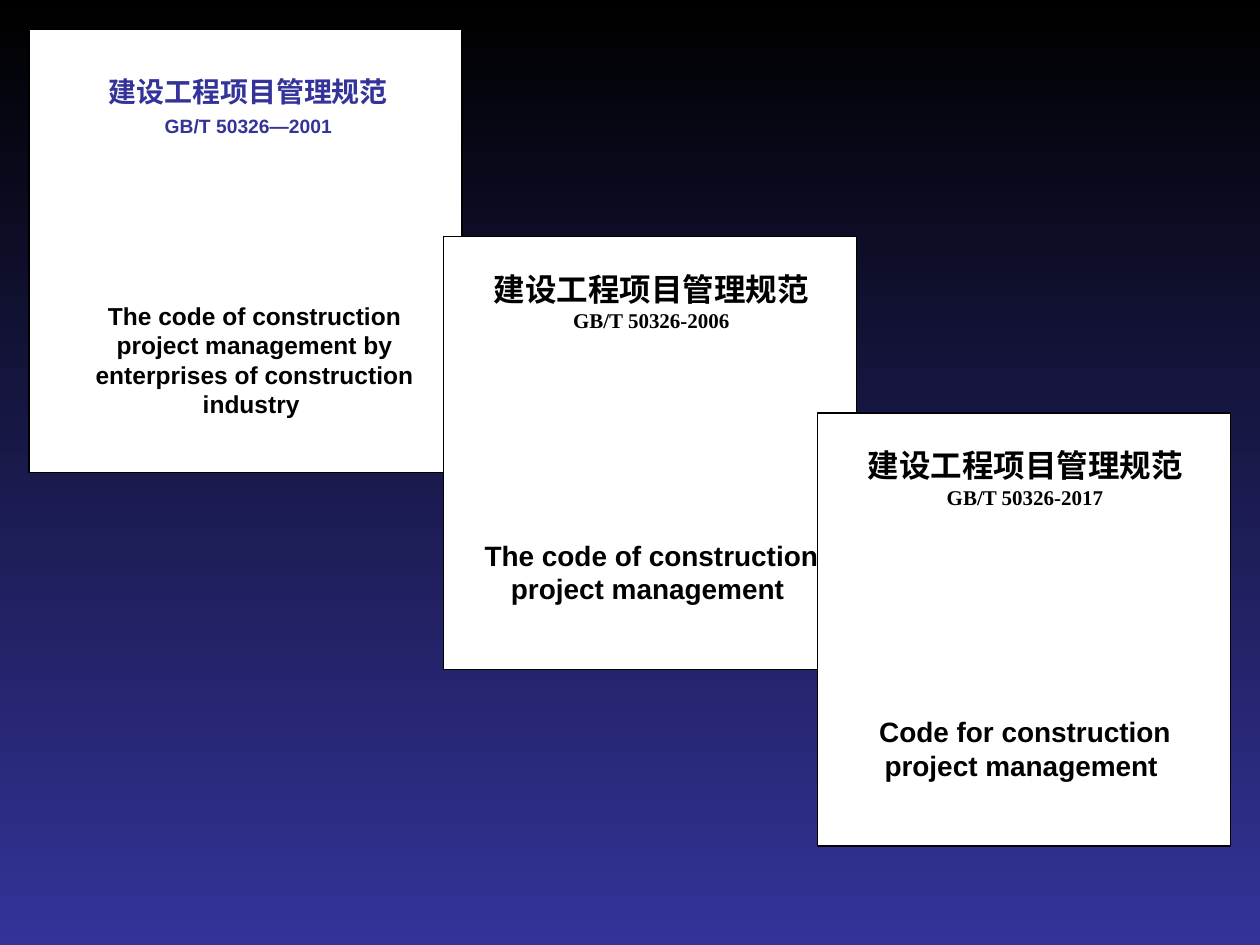
from pptx import Presentation
from pptx.dml.color import RGBColor
from pptx.enum.shapes import MSO_SHAPE
from pptx.enum.text import MSO_ANCHOR, PP_ALIGN
from pptx.util import Pt

RECT = MSO_SHAPE.RECTANGLE
MIDDLE, TOP = MSO_ANCHOR.MIDDLE, MSO_ANCHOR.TOP
CENTER = PP_ALIGN.CENTER
COLORS = {"black": "000000", "white": "FFFFFF", "blue": "333399"}
NAME = "建设工程项目管理规范"


def color(key):
    return RGBColor.from_string(COLORS[key])


def paint(slide):
    """Fade the background from black down to blue."""
    fill = slide.background.fill
    fill.gradient()
    fill.gradient_angle = 270
    for stop, key, place in zip(fill.gradient_stops, ("black", "blue"), (0, 1)):
        stop.color.rgb = color(key)
        stop.position = place


def add_card(slide, box):
    card = slide.shapes.add_shape(RECT, *map(Pt, box))
    card.shadow.inherit = False
    card.fill.solid()
    card.fill.fore_color.rgb = color("white")
    card.line.color.rgb = color("black")
    card.line.width = Pt(0.75)


def add_text(slide, box, lines, anchor, ink="black", **layout):
    """Add centred bold lines, each given as (text, size, font)."""
    frame = slide.shapes.add_textbox(*map(Pt, box)).text_frame
    frame.word_wrap = True
    frame.vertical_anchor = anchor
    for i, (text, size, font) in enumerate(lines):
        para = frame.add_paragraph() if i else frame.paragraphs[0]
        para.alignment = CENTER
        for key, value in layout.items():
            setattr(para, key, value)
        run = para.add_run()
        run.text = text
        run.font.color.rgb = color(ink)
        for key, value in {"size": Pt(size), "name": font, "bold": True}.items():
            setattr(run.font, key, value)


def add_first(slide):
    add_card(slide, (16.5, 16.5, 247.5, 253.5))
    head = [(NAME, 16, "Arial"), ("GB/T 50326—2001", 11, "Arial")]
    add_text(slide, (34, 22.5, 216, 75), head, MIDDLE, "blue",
             line_spacing=1.05, space_after=Pt(3))
    title = ("The code of construction project management by "
             "enterprises of construction industry ")
    add_text(slide, (34, 168.5, 223, 78.5), [(title, 14, "Arial")], TOP)


def add_later(slide, left, top, code, title):
    """Add one of the two later editions, which share a layout."""
    add_card(slide, (left, top, 236, 247.5))
    head = [(NAME, 18, "Arial"), (code, 12, "Times New Roman")]
    add_text(slide, (left + 11, top + 11.5, 215.5, 51), head, MIDDLE)
    add_text(slide, (left + 11, top + 169, 215.5, 67.5),
             [(title, 16, "Arial")], TOP)


def main():
    prs = Presentation()
    prs.slide_width, prs.slide_height = Pt(720), Pt(540)
    slide = prs.slides.add_slide(prs.slide_layouts[6])
    paint(slide)

    # Three editions, stepping down to the right
    add_first(slide)
    add_later(slide, 253.5, 135, "GB/T 50326-2006",
              "The code of construction project management ")
    add_later(slide, 467, 236, "GB/T 50326-2017",
              "Code for construction project management ")

    prs.save("out.pptx")


if __name__ == "__main__":
    main()
